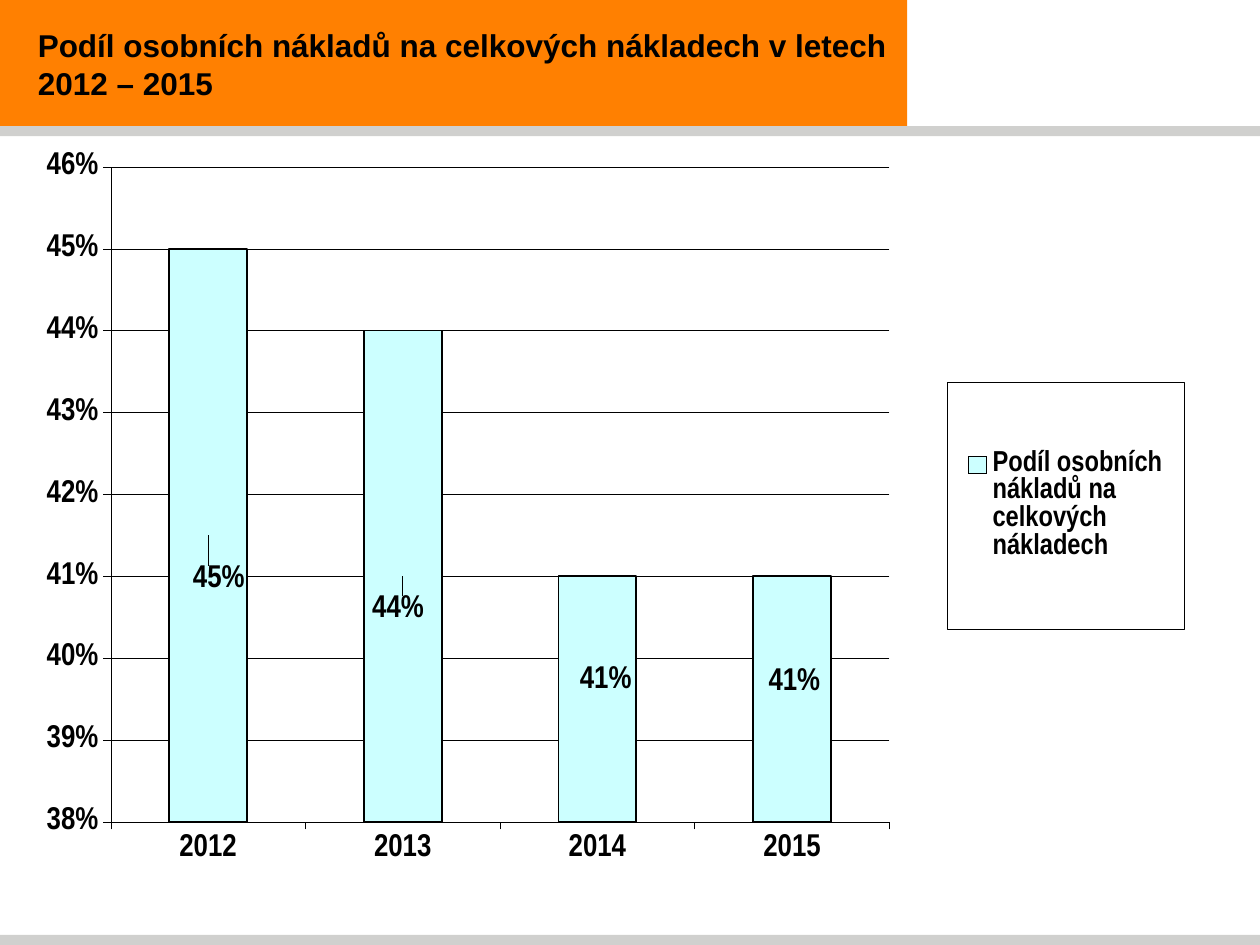
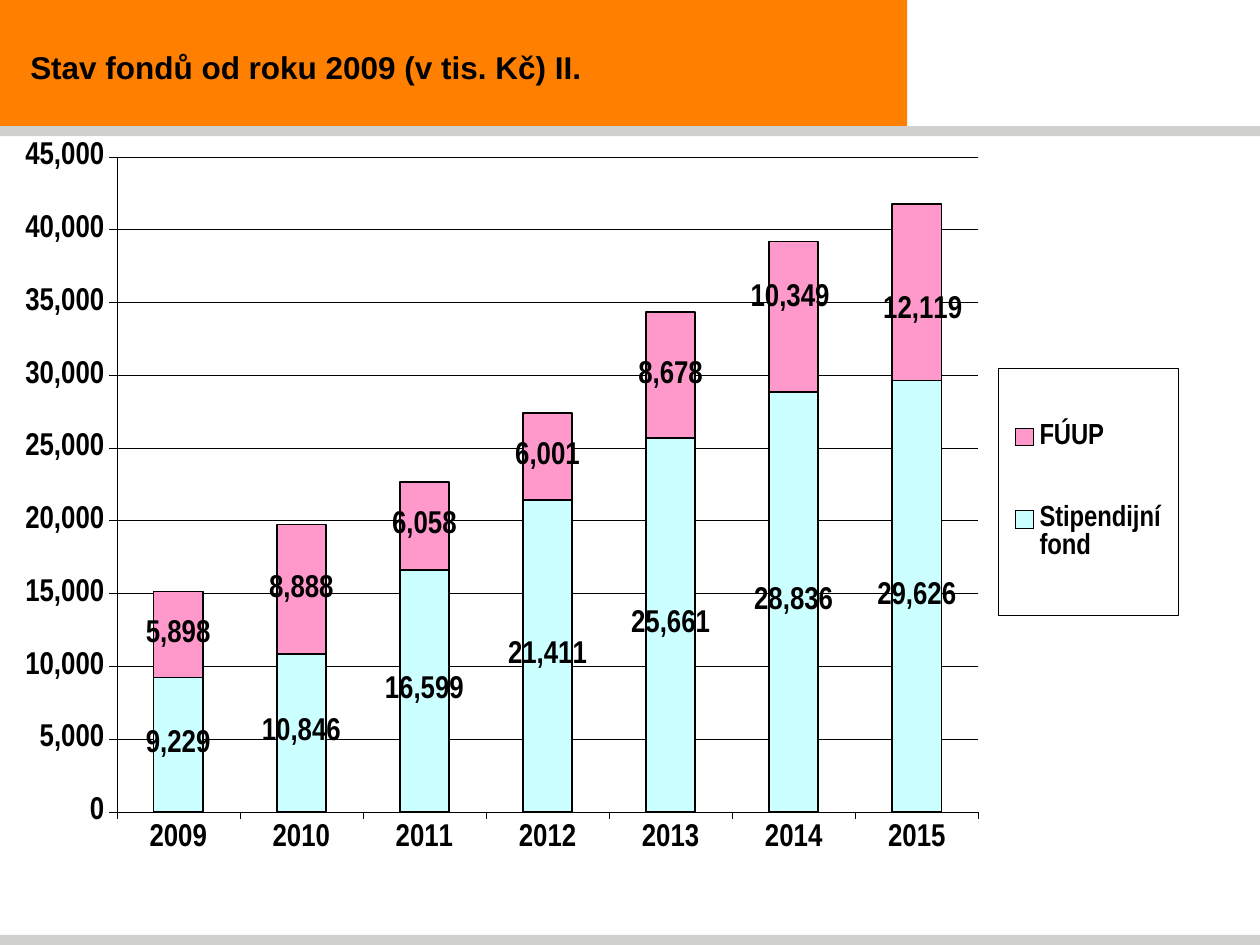
from pptx import Presentation
from pptx.chart.data import CategoryChartData as ChartData
from pptx.dml.color import RGBColor
from pptx.enum.chart import XL_CHART_TYPE as ChartType
from pptx.enum.chart import XL_LEGEND_POSITION as LegendSide
from pptx.enum.chart import XL_TICK_LABEL_POSITION as LabelSide
from pptx.enum.chart import XL_TICK_MARK as Tick
from pptx.enum.shapes import MSO_SHAPE as Shape
from pptx.enum.text import MSO_ANCHOR as Anchor
from pptx.enum.text import MSO_AUTO_SIZE as AutoSize
from pptx.enum.text import PP_ALIGN as Align
from pptx.oxml import parse_xml
from pptx.oxml.ns import nsdecls, qn
from pptx.util import Inches, Pt

COLUMNS, ROWS = 100, 75
ORANGE, GREY, BLACK = "FF8001", "D0D0CE", "000000"
AQUA, PINK = "CCFFFF", "FF99CC"
HAIRLINE = 0.25


def color(value):
    return RGBColor.from_string(value)


def style_font(font, size=18, name="Arial Narrow", ink=BLACK):
    font.size, font.name, font.bold = Pt(size), name, True
    font.color.rgb = color(ink)


def style_line(line, width=HAIRLINE, ink=BLACK):
    line.width = Pt(width)
    line.color.rgb = color(ink)


def write(frame, text, **style):
    frame.text = text
    para = frame.paragraphs[0]
    para.alignment = Align.LEFT
    style_font(para.runs[0].font, **style)


def set_layout(parent, index, modes, **percents):
    for layout in parent.findall(qn("c:layout")):
        parent.remove(layout)
    shares = "".join(f'<c:{key} val="{value / 100:.4f}"/>' for key, value in percents.items())
    parent.insert(index, parse_xml(
        f'<c:layout {nsdecls("c")}><c:manualLayout>{modes}{shares}</c:manualLayout></c:layout>'))


class Builder:
    """Holds the house style and the current slide."""

    EDGE = '<c:xMode val="edge"/><c:yMode val="edge"/>'
    INNER = '<c:layoutTarget val="inner"/>' + EDGE

    def __init__(self):
        self.deck = Presentation()
        self.deck.slide_width, self.deck.slide_height = Inches(10), Inches(7.5)
        self.page = None

    def grid(self, left, top, width, height):
        column = self.deck.slide_width / COLUMNS
        row = self.deck.slide_height / ROWS
        return [round(value) for value in (left * column, top * row, width * column, height * row)]

    def add_page(self):
        first = self.page is None
        self.page = self.deck.slides.add_slide(self.deck.slide_layouts[5])
        if first:
            self.add_master_band(20, ORANGE, 0, 0, 72, 10)
            self.add_master_band(21, GREY, 0, 74.2, COLUMNS, 0.8)
            self.add_master_band(22, GREY, 0, 10, COLUMNS, 0.8)

    def add_master_band(self, number, fill, *place):
        band = self.page.shapes.add_shape(Shape.RECTANGLE, *self.grid(*place))
        band.shadow.inherit = False
        band.fill.solid()
        band.fill.fore_color.rgb = color(fill)
        band.line.fill.background()
        band.name = f"Band {number}"
        band._element.nvSpPr.cNvPr.set("id", str(number))
        self.deck.slide_master.shapes._spTree.append(band._element)

    def add_title(self, text, place, inset):
        box = self.page.shapes.title
        box.left, box.top, box.width, box.height = self.grid(*place)
        frame = box.text_frame
        frame.auto_size, frame.word_wrap = AutoSize.NONE, True
        frame.vertical_anchor = Anchor.MIDDLE
        frame.margin_left = self.grid(inset, 0, 0, 0)[0]
        write(frame, text, name="Arial")

    def add_stacked_chart(self, place, years, series, fmt, scale, plot, legend, legend_size, nudges):
        data = ChartData(number_format=fmt)
        data.categories = years
        for name, values, _ in series:
            data.add_series(name, values)
        chart = self.page.shapes.add_chart(ChartType.COLUMN_STACKED, *self.grid(*place), data).chart
        chart.has_title = False
        style_font(chart.font)
        bars = chart.plots[0]
        bars.gap_width, bars.overlap, bars.vary_by_categories = 150, 100, False
        set_layout(chart._chartSpace.chart.plotArea, 0, self.INNER, **dict(zip("xywh", plot)))
        self.style_axes(chart, fmt, scale)
        for bar, (_, _, fill) in zip(bars.series, series):
            self.style_bar(bar, fill, fmt)
        self.nudge_labels(bars.series[-1], nudges)
        self.style_legend(chart, legend, legend_size)

    def style_axes(self, chart, fmt, scale):
        for axis in (chart.category_axis, chart.value_axis):
            axis.major_tick_mark, axis.minor_tick_mark = Tick.OUTSIDE, Tick.NONE
            style_line(axis.format.line)
            style_font(axis.tick_labels.font)
        chart.category_axis.tick_label_position = LabelSide.LOW
        axis = chart.value_axis
        axis.minimum_scale, axis.maximum_scale, axis.major_unit = scale
        axis.tick_labels.number_format = fmt
        axis.tick_labels.number_format_is_linked = False
        axis.has_major_gridlines = True
        style_line(axis.major_gridlines.format.line)

    def style_bar(self, bar, fill, fmt):
        bar.format.fill.solid()
        bar.format.fill.fore_color.rgb = color(fill)
        style_line(bar.format.line, width=1)
        labels = bar.data_labels
        labels.show_value = True
        labels.number_format, labels.number_format_is_linked = fmt, False
        style_font(labels.font)

    def nudge_labels(self, bar, nudges):
        for index, (right, down) in nudges.items():
            style_font(bar.points[index].data_label.font)
            label = bar._element.xpath(f"c:dLbls/c:dLbl[c:idx/@val={index}]")[0]
            set_layout(label, 1, "", x=right, y=down)

    def style_legend(self, chart, place, size):
        chart.has_legend = True
        legend = chart.legend
        legend.position, legend.include_in_layout = LegendSide.RIGHT, False
        style_font(legend.font, size=size)
        element = legend._element
        set_layout(element, 1, self.EDGE, **dict(zip("xywh", place)))
        element.find(qn("c:txPr")).addprevious(parse_xml(
            f'<c:spPr {nsdecls("c", "a")}><a:noFill/><a:ln w="{Pt(HAIRLINE)}"><a:solidFill>'
            f'<a:srgbClr val="{BLACK}"/></a:solidFill></a:ln></c:spPr>'))


def main():
    builder = Builder()

    builder.add_page()
    builder.add_title("Podíl osobních nákladů na celkových nákladech v letech 2012 – 2015",
                      (0, 1.7, 72, 6.8), inset=3)
    builder.add_stacked_chart(
        (2.2, 12.1, 94.2, 59.5),
        [str(year) for year in range(2012, 2016)],
        [("Podíl osobních nákladů na celkových nákladech", (0.45, 0.44, 0.41, 0.41), AQUA)],
        fmt="0%", scale=(0.38, 0.46, 0.01),
        plot=(7, 1.9, 65.6, 87.4), legend=(77.5, 30.6, 19.9, 33), legend_size=16.5,
        nudges={0: (0.9, 5.9), 1: (-0.4, 4.5), 2: (0.7, -2.5), 3: (0.2, -2.2)})

    builder.add_page()
    builder.add_title("Stav fondů od roku 2009 (v tis. Kč) II.", (0, 1, 72, 8.6), inset=2.4)
    builder.add_stacked_chart(
        (0.6, 11.3, 94.2, 59.5),
        [str(year) for year in range(2009, 2016)],
        [("Stipendijní fond", (9229, 10846, 16599, 21411, 25661, 28836, 29626), AQUA),
         ("FÚUP", (5898, 8888, 6058, 6001, 8678, 10349, 12119), PINK)],
        fmt="#,##0", scale=(0, 45000, 5000),
        plot=(9.2, 1.9, 72.6, 87.4), legend=(83.5, 30.1, 15.1, 33), legend_size=16.6,
        nudges={5: (-0.3, -2.4), 6: (0.5, 2.4)})

    builder.deck.save("out.pptx")


if __name__ == "__main__":
    main()
